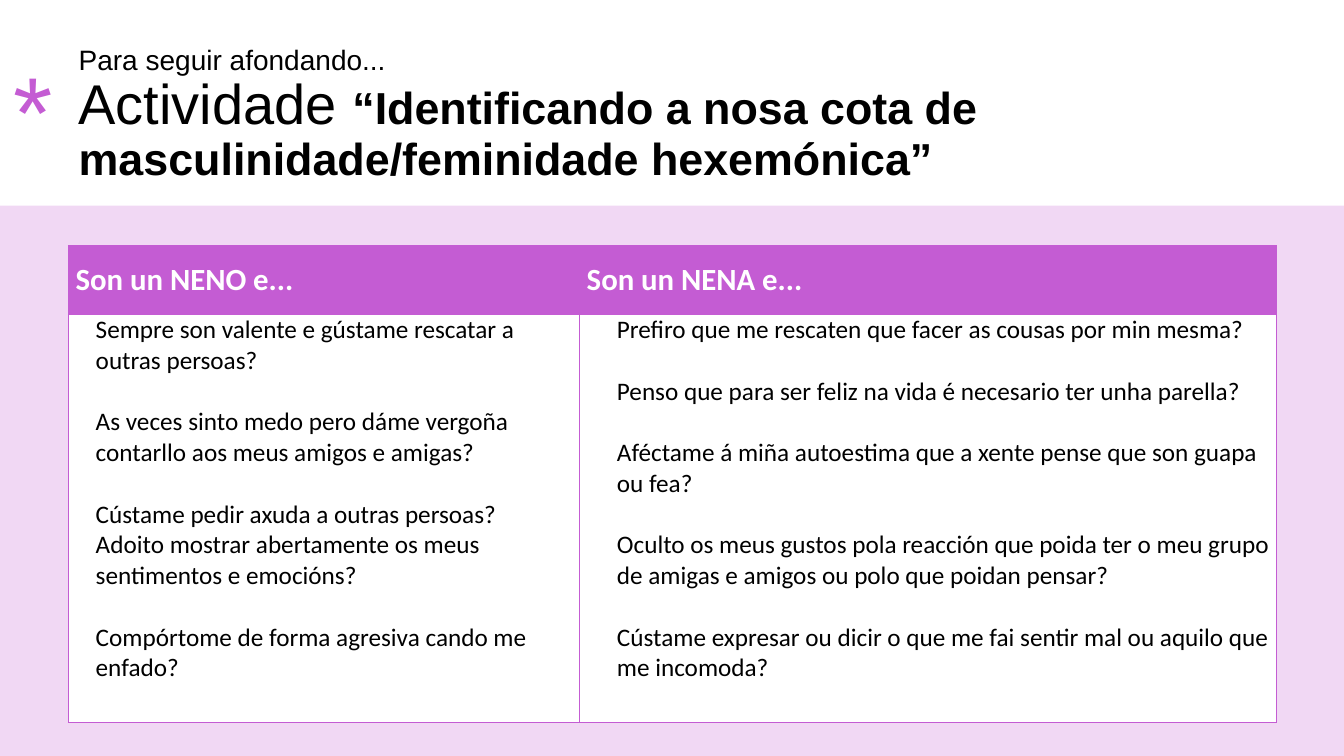
from lxml import etree
from pptx import Presentation
from pptx.dml.color import RGBColor
from pptx.enum.shapes import MSO_SHAPE
from pptx.enum.text import MSO_ANCHOR, MSO_AUTO_SIZE, PP_ALIGN
from pptx.oxml.ns import qn
from pptx.util import Inches, Pt

RECT = MSO_SHAPE.RECTANGLE
MIDDLE, TOP = MSO_ANCHOR.MIDDLE, MSO_ANCHOR.TOP
LEFT = PP_ALIGN.LEFT
NO_FIT = MSO_AUTO_SIZE.NONE

COLORS = {"purple": "C45CD3", "lilac": "F1D8F4", "white": "FFFFFF", "black": "000000"}
SLIDE_W, SLIDE_H = 13.33, 7.5
MARGIN = 0.68
BAND_TOP = 2.04
TABLE_TOP = 2.44
COL_WIDTHS = (5.07, 6.91)
ROW_HEIGHTS = (0.68, 4.05)
BLANK_LINE = 22  # points between separate questions

HEADERS = ("Son un NENO e...", "Son un NENA e...")
# Each group is a run of paragraphs without space between them.
BOY_GROUPS = (
    ("Sempre son valente e gústame rescatar a outras persoas?",),
    ("As veces sinto medo pero dáme vergoña contarllo aos meus amigos e amigas?",),
    ("Cústame pedir axuda a outras persoas?",
     "Adoito mostrar abertamente os meus sentimentos e emocións?"),
    ("Compórtome de forma agresiva cando me enfado?",),
)
GIRL_GROUPS = (
    ("Prefiro que me rescaten que facer as cousas por min mesma?",),
    ("Penso que para ser feliz na vida é necesario ter unha parella?",),
    ("Aféctame á miña autoestima que a xente pense que son guapa ou fea?",),
    ("Oculto os meus gustos pola reacción que poida ter o meu grupo de amigas "
     "e amigos ou polo que poidan pensar?",),
    ("Cústame expresar ou dicir o que me fai sentir mal ou aquilo que me incomoda?",),
)


def rgb(name):
    return RGBColor.from_string(COLORS[name])


def add_text(p, text, size=18, font="Calibri", color="black", bold=False):
    r = p.add_run()
    r.text = text
    r.font.size = Pt(size)
    r.font.name = font
    r.font.bold = bold
    r.font.color.rgb = rgb(color)


def add_band(s):
    sp = s.shapes.add_shape(RECT, 0, Inches(BAND_TOP), Inches(SLIDE_W),
                            Inches(SLIDE_H - BAND_TOP))
    sp.shadow.inherit = False
    sp.fill.solid()
    sp.fill.fore_color.rgb = rgb("lilac")
    sp.line.fill.background()


def set_title(s):
    sp = s.shapes.title
    sp.left, sp.top = Inches(MARGIN), Inches(0.25)
    sp.width, sp.height = Inches(SLIDE_W - MARGIN), Inches(1.79)
    tf = sp.text_frame
    tf.auto_size = NO_FIT
    tf.vertical_anchor = MIDDLE
    p = tf.paragraphs[0]
    p.alignment = LEFT
    p.line_spacing = 0.9
    add_text(p, "Para seguir afondando...", size=20, font="Arial")
    p.add_line_break()
    add_text(p, "Actividade ", size=40, font="Arial")
    add_text(p, "“Identificando a nosa cota de", size=32, font="Arial", bold=True)
    p.add_line_break()
    add_text(p, "masculinidade/feminidade hexemónica”", size=32, font="Arial", bold=True)


def add_asterisk(s):
    sp = s.shapes.add_textbox(Inches(0.04), Inches(0.52), Inches(1.04), Inches(1.25))
    tf = sp.text_frame
    tf.word_wrap = True
    tf.vertical_anchor = MIDDLE
    p = tf.paragraphs[0]
    p.line_spacing = 0.9
    add_text(p, "*", size=72, font="Arial", color="purple")


def format_cell(cell, fill, anchor):
    """Set insets, anchor, 1 pt borders and fill; borders must precede the fill."""
    cell.margin_left = cell.margin_right = Inches(0.07)
    cell.margin_top = cell.margin_bottom = 0
    cell.vertical_anchor = anchor
    tcPr = cell._tc.get_or_add_tcPr()
    for side in ("lnL", "lnR", "lnT", "lnB"):
        ln = etree.SubElement(tcPr, qn("a:" + side), w=str(Pt(1)))
        solid = etree.SubElement(ln, qn("a:solidFill"))
        etree.SubElement(solid, qn("a:srgbClr"), val=COLORS["purple"])
    cell.fill.solid()
    cell.fill.fore_color.rgb = rgb(fill)


def fill_questions(cell, groups, indent):
    tf = cell.text_frame
    p = None
    for group in groups:
        for i, question in enumerate(group):
            first = p is None
            p = tf.paragraphs[0] if first else tf.add_paragraph()
            pPr = p._p.get_or_add_pPr()
            pPr.set("marL", str(Inches(indent)))
            pPr.set("indent", "0")
            if i == 0 and not first:
                p.space_before = Pt(BLANK_LINE)
            add_text(p, question)


def add_question_table(s):
    table = s.shapes.add_table(2, 2, Inches(MARGIN), Inches(TABLE_TOP),
                               Inches(sum(COL_WIDTHS)), Inches(sum(ROW_HEIGHTS))).table
    table.horz_banding = False
    for col, width in zip(table.columns, COL_WIDTHS):
        col.width = Inches(width)
    for row, height in zip(table.rows, ROW_HEIGHTS):
        row.height = Inches(height)
    columns = zip(HEADERS, (BOY_GROUPS, GIRL_GROUPS), (0.2, 0.3))
    for c, (header, groups, indent) in enumerate(columns):
        head, body = table.cell(0, c), table.cell(1, c)
        format_cell(head, "purple", MIDDLE)
        add_text(head.text_frame.paragraphs[0], header, size=22, color="white", bold=True)
        format_cell(body, "white", TOP)
        fill_questions(body, groups, indent)


def main():
    prs = Presentation()
    prs.slide_width, prs.slide_height = Inches(SLIDE_W), Inches(SLIDE_H)
    s = prs.slides.add_slide(prs.slide_layouts[5])
    add_band(s)
    set_title(s)
    add_question_table(s)
    add_asterisk(s)
    prs.save("out.pptx")


if __name__ == "__main__":
    main()
